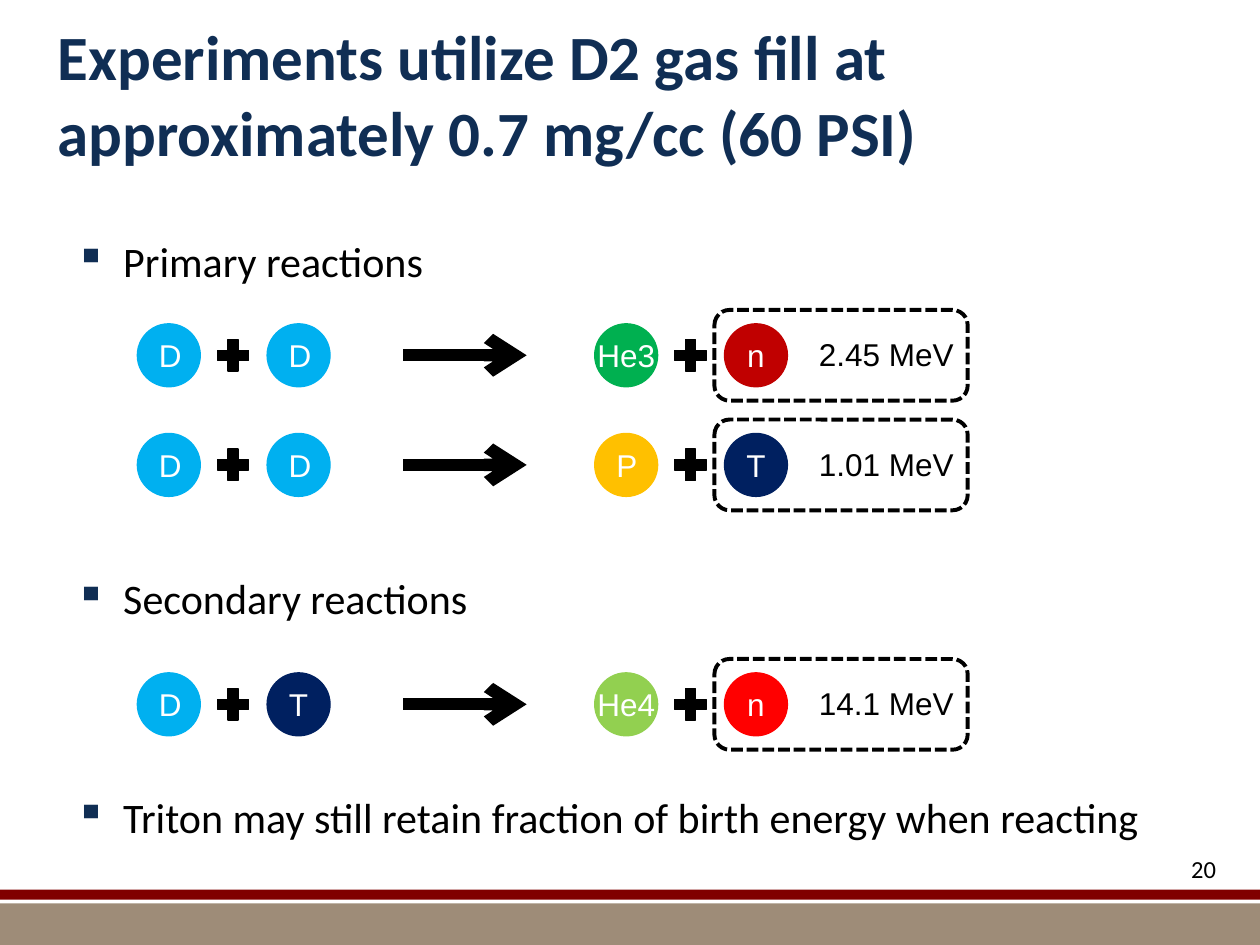
"""Build the slide on primary and secondary D2 fusion reactions."""
from pptx import Presentation
from pptx.dml.color import RGBColor
from pptx.enum import dml, shapes, text
from pptx.oxml import parse_xml
from pptx.oxml.ns import nsdecls, qn
from pptx.util import Inches, Pt

TITLE = "Experiments utilize D2 gas fill at approximately 0.7 mg/cc (60 PSI)"
PAGE = "20"
NAVY = "102E54"
BULLETS = [
    ("Primary reactions", 0),
    ("Secondary reactions", 164),
    ("Triton may still retain fraction of birth energy when reacting", 96),
]
DEUTERON = ("D", "00B0F0")
TRITON = ("T", "002060")
REACTIONS = [
    (2.57, [DEUTERON, DEUTERON, ("He3", "00B050"), ("n", "C00000")], "2.45 MeV"),
    (3.44, [DEUTERON, DEUTERON, ("P", "FFC000"), TRITON], "1.01 MeV"),
    (5.34, [DEUTERON, TRITON, ("He4", "92D050"), ("n", "FF0000")], "14.1 MeV"),
]
BANDS = [(7.17, 0.33, "9E8C78"), (7.06, 0.08, "800000")]
PARTICLE_LEFTS = [1.09, 2.12, 4.72, 5.75]
PLUS_LEFTS = [1.68, 5.31]
DIAMETER, PLUS_SIZE, LABEL_HEIGHT = 0.5, 0.34, 0.4
FRAME_WIDTH, FRAME_HEIGHT = 2.01, 0.72

prs = Presentation()
prs.slide_width, prs.slide_height = Inches(10), Inches(7.5)
slide = prs.slides.add_slide(prs.slide_layouts[6])


def color(hex_value):
    return RGBColor.from_string(hex_value)


def write(paragraph, words, size=18, font="Arial", fill="000000", bold=False,
          align=text.PP_ALIGN.LEFT):
    paragraph.alignment = align
    run = paragraph.add_run()
    run.text = words
    run.font.size, run.font.name, run.font.bold = Pt(size), font, bold
    run.font.color.rgb = color(fill)


def add_box(left, top, width, height, wrap=True, anchor=text.MSO_ANCHOR.TOP):
    frame = slide.shapes.add_textbox(*map(Inches, (left, top, width, height))).text_frame
    frame.word_wrap, frame.vertical_anchor = wrap, anchor
    return frame


def add_solid(kind, left, top, width, height, fill=None, line=None, weight=0.75):
    shape = slide.shapes.add_shape(kind, *map(Inches, (left, top, width, height)))
    shape.shadow.inherit = False
    if fill:
        shape.fill.solid()
        shape.fill.fore_color.rgb = color(fill)
    else:
        shape.fill.background()
    if line:
        shape.line.color.rgb = color(line)
        shape.line.width = Pt(weight)
    else:
        shape.line.fill.background()
    return shape


def add_particle(left, top, symbol, fill):
    circle = add_solid(shapes.MSO_SHAPE.OVAL, left, top, DIAMETER, DIAMETER, fill, fill)
    if len(symbol) == 1:
        frame = circle.text_frame
        frame.vertical_anchor = text.MSO_ANCHOR.MIDDLE
    else:
        frame = add_box(left - 0.08, top + 0.05, 0.66, LABEL_HEIGHT, wrap=False)
    write(frame.paragraphs[0], symbol, fill="FFFFFF", align=text.PP_ALIGN.CENTER)


def add_arrow(left, right, middle):
    arrow = slide.shapes.add_connector(
        shapes.MSO_CONNECTOR.STRAIGHT, *map(Inches, (left, middle, right, middle)))
    arrow.line.color.rgb = color("000000")
    arrow.line.width = Pt(7)
    arrow.line._get_or_add_ln().append(
        parse_xml(f'<a:tailEnd {nsdecls("a")} type="arrow"/>'))
    arrow._element.spPr.append(parse_xml(f'<a:effectLst {nsdecls("a")}/>'))


def add_reaction(top, particles, energy):
    middle = top + DIAMETER / 2
    for left, (symbol, fill) in zip(PARTICLE_LEFTS, particles):
        add_particle(left, top, symbol, fill)
    for left in PLUS_LEFTS:
        add_solid(shapes.MSO_SHAPE.MATH_PLUS, left, middle - PLUS_SIZE / 2,
                  PLUS_SIZE, PLUS_SIZE, "000000", "000000")
    add_arrow(3.2, 4.18, middle)
    label = add_box(6.4, top + 0.04, 1.28, LABEL_HEIGHT, wrap=False)
    write(label.paragraphs[0], energy)
    frame = add_solid(shapes.MSO_SHAPE.ROUNDED_RECTANGLE, 5.67, middle - FRAME_HEIGHT / 2,
                      FRAME_WIDTH, FRAME_HEIGHT, line="000000", weight=2.25)
    frame.line.dash_style = dml.MSO_LINE.SQUARE_DOT
    frame.line._get_or_add_ln().find(qn("a:prstDash")).set("val", "sysDash")


def add_bullets():
    frame = add_box(0.5, 1.82, 9, 4.78)
    for index, (words, gap) in enumerate(BULLETS):
        paragraph = frame.add_paragraph() if index else frame.paragraphs[0]
        props = paragraph._p.get_or_add_pPr()
        props.set("marL", str(Inches(0.38)))
        props.set("indent", str(-Inches(0.38)))
        props.append(parse_xml(
            f'<a:buClr {nsdecls("a")}><a:srgbClr val="{NAVY}"/></a:buClr>'))
        props.append(parse_xml(f'<a:buChar {nsdecls("a")} char="▪"/>'))
        paragraph.space_before = Pt(gap)
        write(paragraph, words, size=24, font="Calibri")


for band_top, band_height, band_fill in BANDS:
    add_solid(shapes.MSO_SHAPE.RECTANGLE, 0, band_top, 10, band_height, band_fill)
heading = add_box(0.36, 0.2, 8.77, 1.08, anchor=text.MSO_ANCHOR.MIDDLE)
write(heading.paragraphs[0], TITLE, size=36, font="Calibri", fill=NAVY, bold=True)
page_number = add_box(9.08, 6.73, 0.67, 0.41)
write(page_number.paragraphs[0], PAGE, size=14, font="Calibri", align=text.PP_ALIGN.RIGHT)
add_bullets()
for reaction in REACTIONS:
    add_reaction(*reaction)

prs.save("out.pptx")
